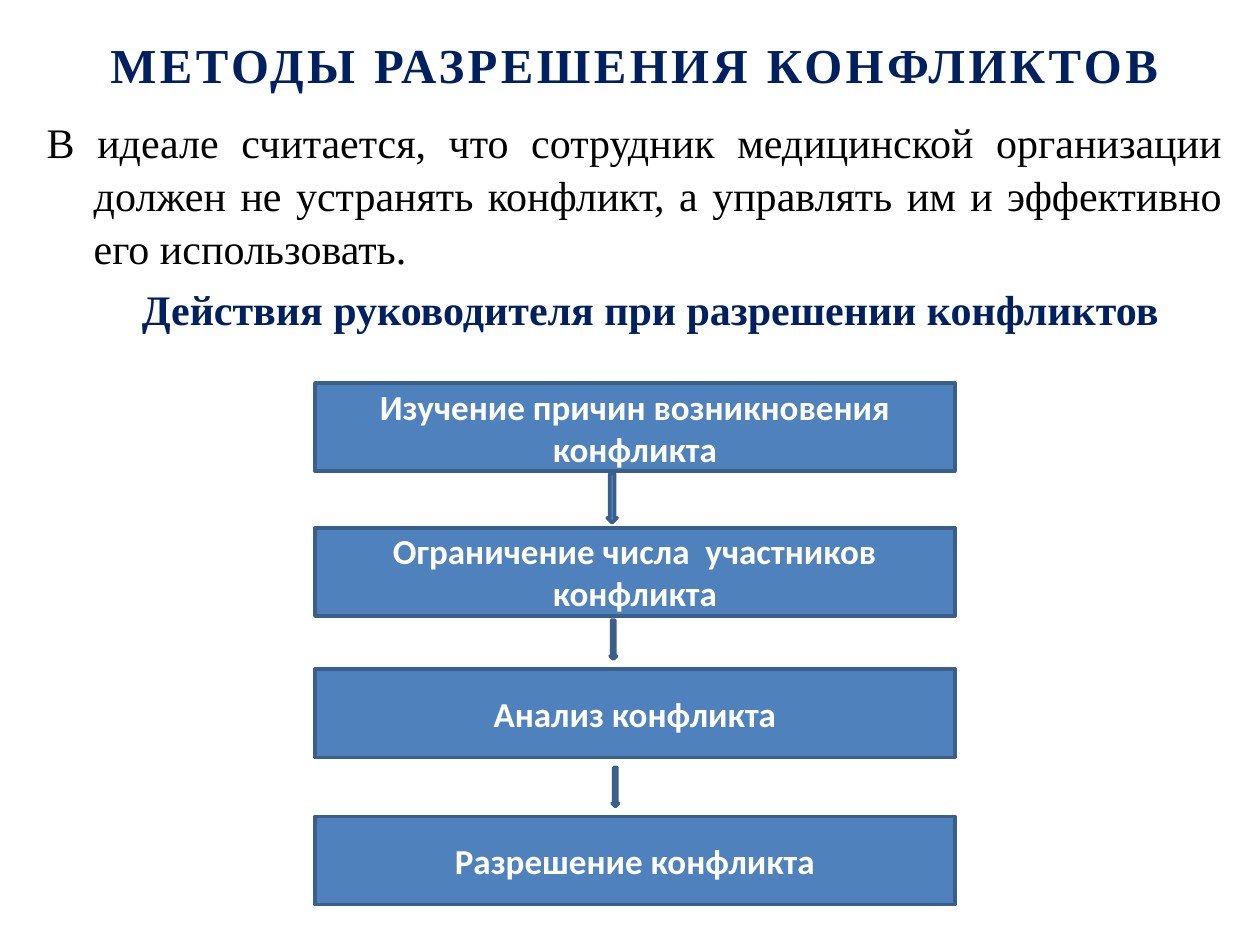
from dataclasses import dataclass

from pptx import Presentation
from pptx.dml.color import RGBColor
from pptx.enum.shapes import MSO_SHAPE
from pptx.enum.text import MSO_ANCHOR, MSO_AUTO_SIZE, PP_ALIGN
from pptx.shapes.autoshape import Shape
from pptx.slide import Slide
from pptx.text.text import _Paragraph, _Run
from pptx.util import Cm, Pt

COLORS = {
    "navy": "002060",
    "black": "000000",
    "white": "FFFFFF",
    "blue": "4F81BD",
    "outline": "3A5F8C",
}
SERIF = "Times New Roman"
SANS = "Calibri"
STEP_LEFT, STEP_WIDTH, STEP_HEIGHT = 6.35, 12.9, 1.78


@dataclass(frozen=True)
class Step:
    top: float
    lines: tuple[str, ...]


@dataclass(frozen=True)
class Arrow:
    left: float
    top: float
    width: float
    height: float


STEPS = (
    Step(7.72, ("Изучение причин возникновения", "конфликта")),
    Step(10.64, ("Ограничение числа  участников", "конфликта")),
    Step(13.49, ("Анализ конфликта",)),
    Step(16.46, ("Разрешение конфликта",)),
)
ARROWS = (
    Arrow(12.24, 9.55, 0.2, 0.99),
    Arrow(12.3, 12.5, 0.13, 0.79),
    Arrow(12.34, 15.47, 0.13, 0.79),
)


def color(name: str) -> RGBColor:
    return RGBColor.from_string(COLORS[name])


def add_run(paragraph: _Paragraph, text: str, font: str, size: float,
            color_name: str, bold: bool = True) -> _Run:
    run = paragraph.add_run()
    run.text = text
    run.font.name = font
    run.font.size = Pt(size)
    run.font.bold = bold
    run.font.color.rgb = color(color_name)
    return run


def add_title(slide: Slide) -> None:
    title = slide.shapes.title
    title.left, title.top, title.width, title.height = Cm(1.37), Cm(0.38), Cm(22.86), Cm(1.83)
    frame = title.text_frame
    frame.auto_size = MSO_AUTO_SIZE.NONE
    frame.vertical_anchor = MSO_ANCHOR.MIDDLE
    paragraph = frame.paragraphs[0]
    paragraph.alignment = PP_ALIGN.CENTER
    run = add_run(paragraph, "МЕТОДЫ РАЗРЕШЕНИЯ КОНФЛИКТОВ", SERIF, 27.9, "navy")
    run.font._element.set("spc", "200")


def set_indent(paragraph: _Paragraph, left: float, first_line: float) -> None:
    properties = paragraph._p.get_or_add_pPr()
    properties.set("marL", str(Cm(left)))
    properties.set("indent", str(Cm(first_line)))


def add_introduction(slide: Slide) -> None:
    box = slide.shapes.add_textbox(Cm(0.69), Cm(2.18), Cm(24.2), Cm(5))
    frame = box.text_frame
    frame.word_wrap = True

    statement = frame.paragraphs[0]
    set_indent(statement, 0.95, -0.95)
    statement.alignment = PP_ALIGN.JUSTIFY
    statement.line_spacing = 1.05
    add_run(statement, "В идеале считается, что сотрудник медицинской организации "
            "должен не устранять конфликт, а управлять им и эффективно "
            "его использовать.", SERIF, 24, "black", bold=False)

    heading = frame.add_paragraph()
    set_indent(heading, 1.92, 0)
    heading.line_spacing = 1.05
    heading.space_before = Pt(4.8)
    add_run(heading, "Действия руководителя при разрешении конфликтов", SERIF, 24, "navy")


def add_blue_shape(slide: Slide, kind: MSO_SHAPE, left: float, top: float,
                   width: float, height: float) -> Shape:
    shape = slide.shapes.add_shape(kind, Cm(left), Cm(top), Cm(width), Cm(height))
    shape.shadow.inherit = False
    shape.fill.solid()
    shape.fill.fore_color.rgb = color("blue")
    shape.line.color.rgb = color("outline")
    shape.line.width = Pt(2)
    return shape


def add_step(slide: Slide, step: Step) -> None:
    shape = add_blue_shape(slide, MSO_SHAPE.RECTANGLE, STEP_LEFT, step.top,
                           STEP_WIDTH, STEP_HEIGHT)
    frame = shape.text_frame
    frame.word_wrap = True
    frame.vertical_anchor = MSO_ANCHOR.MIDDLE
    for index, line in enumerate(step.lines):
        paragraph = frame.add_paragraph() if index else frame.paragraphs[0]
        paragraph.alignment = PP_ALIGN.CENTER
        add_run(paragraph, line, SANS, 20, "white")


def main() -> None:
    presentation = Presentation()
    presentation.slide_width, presentation.slide_height = Cm(25.4), Cm(19.05)
    slide = presentation.slides.add_slide(presentation.slide_layouts.get_by_name("Title Only"))
    add_title(slide)
    add_introduction(slide)
    for step in STEPS:
        add_step(slide, step)
    for arrow in ARROWS:
        add_blue_shape(slide, MSO_SHAPE.DOWN_ARROW, arrow.left, arrow.top,
                       arrow.width, arrow.height)
    presentation.save("out.pptx")


if __name__ == "__main__":
    main()
